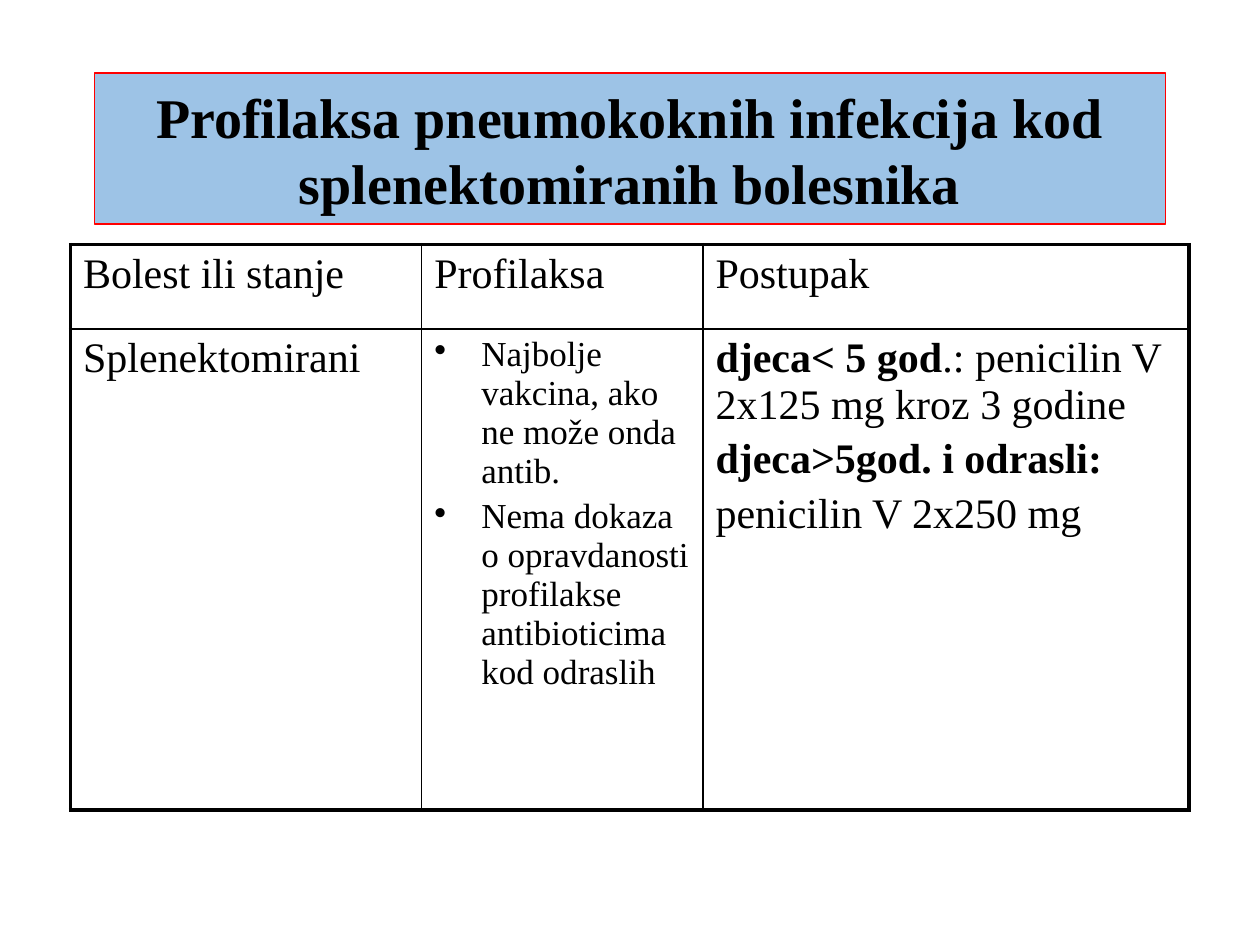
import lxml.etree
import pptx
import pptx.dml.color
import pptx.enum.shapes
import pptx.enum.text
import pptx.oxml.ns
import pptx.util
from pptx.util import Cm

COLORS = {"banner": "9DC3E6", "banner_line": "FF0000", "ink": "000000"}
FONT = "Times New Roman"
COLUMN_WIDTHS = [Cm(7.08), Cm(5.67), Cm(9.8)]
ROW_HEIGHTS = [Cm(1.7), Cm(9.7)]
OUTER_LINE, INNER_LINE = 2.25, 1
BULLET_INDENT = Cm(0.95)

# Each cell is a list of paragraphs, each paragraph a list of (text, bold) spans.
ROWS = [
    [[[("Bolest ili stanje", False)]],
     [[("Profilaksa", False)]],
     [[("Postupak", False)]]],
    [[[("Splenektomirani", False)]],
     [[("Najbolje vakcina, ako ne može onda antib.", False)],
      [("Nema dokaza o opravdanosti profilakse antibioticima kod odraslih", False)]],
     [[("djeca< 5 god", True), (".: penicilin V 2x125 mg kroz 3 godine", False)],
      [("djeca>5god. i odrasli:", True)],
      [("penicilin V 2x250 mg", False)]]],
]


def rgb(name):
    return pptx.dml.color.RGBColor.from_string(COLORS[name])


def add_child(parent, tag, **attributes):
    child = lxml.etree.SubElement(parent, pptx.oxml.ns.qn(tag))
    for key, value in attributes.items():
        child.set(key, str(value))
    return child


def write_text(frame, paragraphs, size=24, align=None, line_spacing=None, bullets=False):
    """Fill a text frame with paragraphs of (text, bold) spans."""
    for index, spans in enumerate(paragraphs):
        para = frame.add_paragraph() if index else frame.paragraphs[0]
        if bullets:
            properties = para._p.get_or_add_pPr()
            properties.set("marL", str(BULLET_INDENT))
            properties.set("indent", str(-BULLET_INDENT))
            add_child(properties, "a:buChar", char="•")
        para.alignment = align
        para.line_spacing = line_spacing
        if index:
            para.space_before = pptx.util.Pt(size * 0.2)
        for text, bold in spans:
            span = para.add_run()
            span.text = text
            span.font.name = FONT
            span.font.size = pptx.util.Pt(size)
            span.font.bold = bold
            span.font.color.rgb = rgb("ink")


def add_banner(page, text):
    box = page.shapes.add_shape(pptx.enum.shapes.MSO_SHAPE.RECTANGLE,
                                Cm(1.9), Cm(1.47), Cm(21.6), Cm(3.05))
    box.shadow.inherit = False
    box.fill.solid()
    box.fill.fore_color.rgb = rgb("banner")
    box.line.color.rgb = rgb("banner_line")
    box.line.width = pptx.util.Pt(0.75)
    frame = box.text_frame
    frame.word_wrap = True
    frame.vertical_anchor = pptx.enum.text.MSO_ANCHOR.BOTTOM
    write_text(frame, [[(text, True)]], size=32,
               align=pptx.enum.text.PP_ALIGN.CENTER, line_spacing=0.98)


def set_borders(cell, outer_sides):
    """Draw all four cell borders, thicker on the table's outer sides."""
    properties = cell._tc.get_or_add_tcPr()
    for position, side in enumerate("LRTB"):
        points = OUTER_LINE if side in outer_sides else INNER_LINE
        line = lxml.etree.Element(pptx.oxml.ns.qn(f"a:ln{side}"),
                                  w=str(pptx.util.Pt(points)))
        add_child(add_child(line, "a:solidFill"), "a:srgbClr", val=COLORS["ink"])
        properties.insert(position, line)


def add_therapy_table(page):
    table = page.shapes.add_table(len(ROWS), len(COLUMN_WIDTHS), Cm(1.42), Cm(4.93),
                                  sum(COLUMN_WIDTHS), sum(ROW_HEIGHTS)).table
    table.first_row = table.horz_banding = False
    for column, width in zip(table.columns, COLUMN_WIDTHS):
        column.width = width
    for row, height in zip(table.rows, ROW_HEIGHTS):
        row.height = height
    last_row, last_column = len(ROWS) - 1, len(COLUMN_WIDTHS) - 1
    for r, row in enumerate(ROWS):
        for c, paragraphs in enumerate(row):
            cell = table.cell(r, c)
            cell.fill.background()
            outer = {"L": c == 0, "R": c == last_column,
                     "T": r == 0, "B": r == last_row}
            set_borders(cell, [side for side in outer if outer[side]])
            bulleted = (r, c) == (1, 1)
            write_text(cell.text_frame, paragraphs,
                       size=20 if bulleted else 24, bullets=bulleted)


def main():
    deck = pptx.Presentation()
    deck.slide_width, deck.slide_height = Cm(25.4), Cm(19.05)
    page = deck.slides.add_slide(deck.slide_layouts[6])
    add_banner(page, "Profilaksa pneumokoknih infekcija kod splenektomiranih bolesnika")
    add_therapy_table(page)
    deck.save("out.pptx")


if __name__ == "__main__":
    main()
